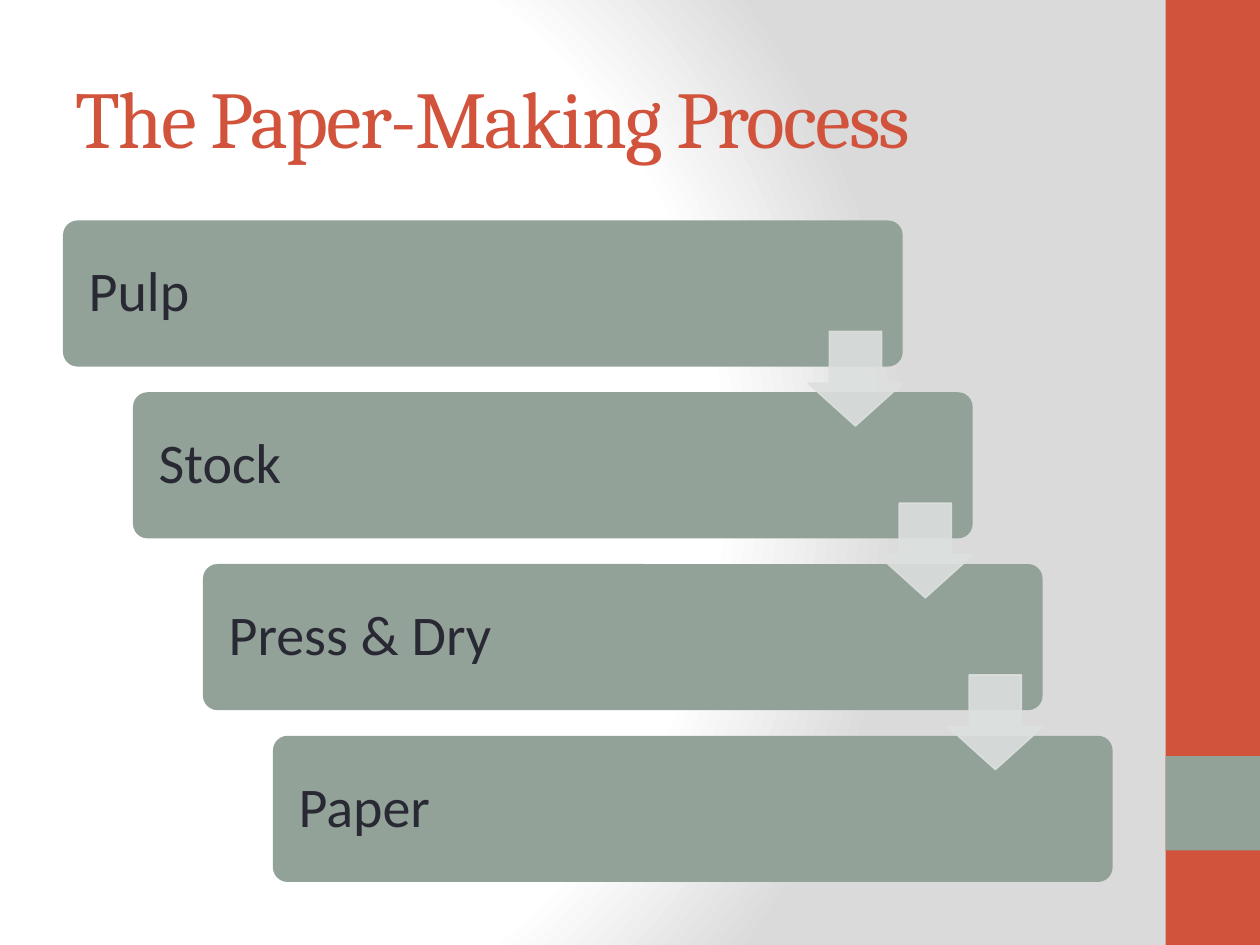
from dataclasses import dataclass

from lxml.etree import SubElement
from pptx import Presentation
from pptx.dml.color import RGBColor as RGB
from pptx.enum.shapes import MSO_SHAPE as Shape
from pptx.enum.text import MSO_ANCHOR as Anchor, PP_ALIGN as Align
from pptx.oxml import parse_xml
from pptx.oxml.ns import nsdecls, qn
from pptx.util import Inches, Pt

TITLE = "The Paper-Making Process"
STEPS = ["Pulp", "Stock", "Press & Dry", "Paper"]


@dataclass(frozen=True)
class Theme:
    accent: str = "D2533C"
    sage: str = "93A299"
    ink: str = "292934"
    arrow: str = "DCE0DE"
    head: str = "Cambria"
    body: str = "Calibri"
    title: int = 46
    step: int = 32
    stops: tuple = ((0, "FFFFFF"), (75, "FFFFFF"), (100, "DADADA"))


THEME = Theme()
WIDE, HIGH = 10, 7.5
UNIT = HIGH / 10              # side band, its square and the arrows
LEFT, RIGHT = 0.5, 8.83       # content edges
TOP, FOOT = 1.75, 7.0         # stair edges
BAR_W = (RIGHT - LEFT) * 0.8
BAR_H = 1.16
STEP_X = (RIGHT - LEFT - BAR_W) / (len(STEPS) - 1)
STEP_Y = (FOOT - TOP - BAR_H) / (len(STEPS) - 1)


def paint(slide):
    """Fill the background with a gradient spreading from the left."""
    slide.background.fill.gradient()
    old = next(slide.element.iter(qn("a:gradFill")))
    stops = "".join(
        f'<a:gs pos="{pos * 1000}"><a:srgbClr val="{color}"/></a:gs>'
        for pos, color in THEME.stops)
    new = parse_xml(
        f'<a:gradFill {nsdecls("a")} rotWithShape="1"><a:gsLst>{stops}</a:gsLst>'
        '<a:path path="circle"><a:fillToRect l="20000" t="50000" r="100000"'
        ' b="50000"/></a:path></a:gradFill>')
    old.getparent().replace(old, new)


def block(slide, kind, box, color, adjust=()):
    shape = slide.shapes.add_shape(kind, *map(Inches, box))
    shape.shadow.inherit = False
    shape.fill.solid()
    shape.fill.fore_color.rgb = RGB.from_string(color)
    shape.line.fill.background()
    for i, value in enumerate(adjust):
        shape.adjustments[i] = value
    return shape


def write(shape, text, size, face, color):
    frame = shape.text_frame
    frame.word_wrap = True
    frame.vertical_anchor = Anchor.MIDDLE
    para = frame.paragraphs[0]
    para.text = text
    para.alignment = Align.LEFT
    font = para.font
    font.size, font.name = Pt(size), face
    font.color.rgb = RGB.from_string(color)
    return para


def stair(slide):
    spots = [(LEFT + i * STEP_X, TOP + i * STEP_Y) for i in range(len(STEPS))]
    for (x, y), name in zip(spots, STEPS):
        bar = block(slide, Shape.ROUNDED_RECTANGLE, (x, y, BAR_W, BAR_H),
                    THEME.sage, [0.1])
        para = write(bar, name, THEME.step, THEME.body, THEME.ink)
        para.line_spacing = 0.9
        bar.text_frame.margin_left = Inches(0.17)
    for x, y in spots[:-1]:
        box = (x + BAR_W - UNIT, y + BAR_H / 2 + 0.3, UNIT, UNIT)
        arrow = block(slide, Shape.DOWN_ARROW, box, THEME.arrow, [0.55, 0.45])
        arrow.line.color.rgb = RGB.from_string(THEME.arrow)
        arrow.line.width = Pt(1)
        for color in arrow.element.spPr.iter(qn("a:srgbClr")):
            SubElement(color, qn("a:alpha")).set("val", "90000")


def main():
    deck = Presentation()
    deck.slide_width, deck.slide_height = Inches(WIDE), Inches(HIGH)
    slide = deck.slides.add_slide(deck.slide_layouts[6])
    paint(slide)
    edge = WIDE - UNIT
    block(slide, Shape.RECTANGLE, (edge, 0, UNIT, HIGH), THEME.accent)
    block(slide, Shape.RECTANGLE, (edge, 8 * UNIT, UNIT, UNIT), THEME.sage)
    title = slide.shapes.add_textbox(
        *map(Inches, (LEFT, 0.3, RIGHT - LEFT, 1.25)))
    para = write(title, TITLE, THEME.title, THEME.head, THEME.accent)
    para.runs[0].font._element.set("spc", "-100")
    stair(slide)
    deck.save("out.pptx")


if __name__ == "__main__":
    main()
